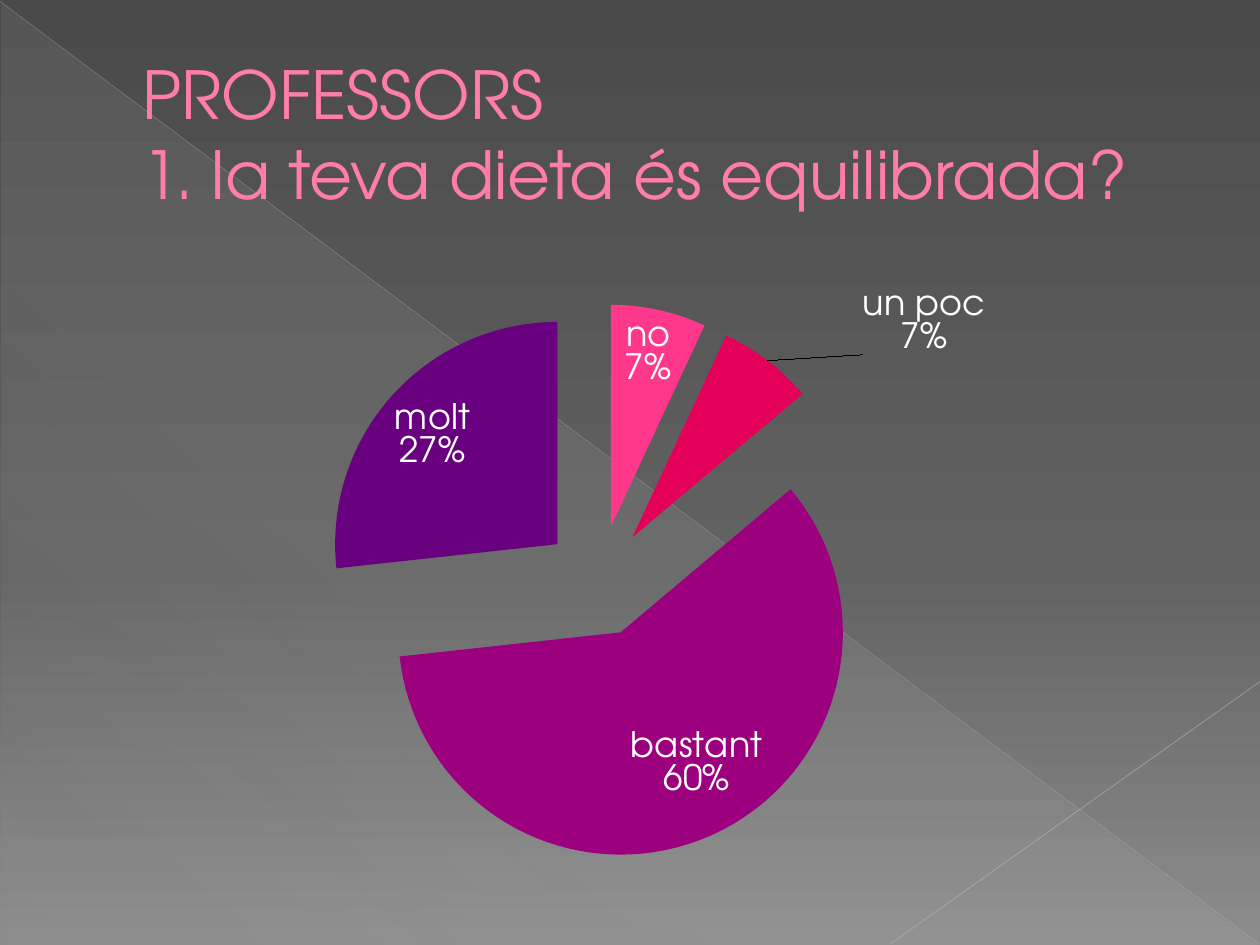
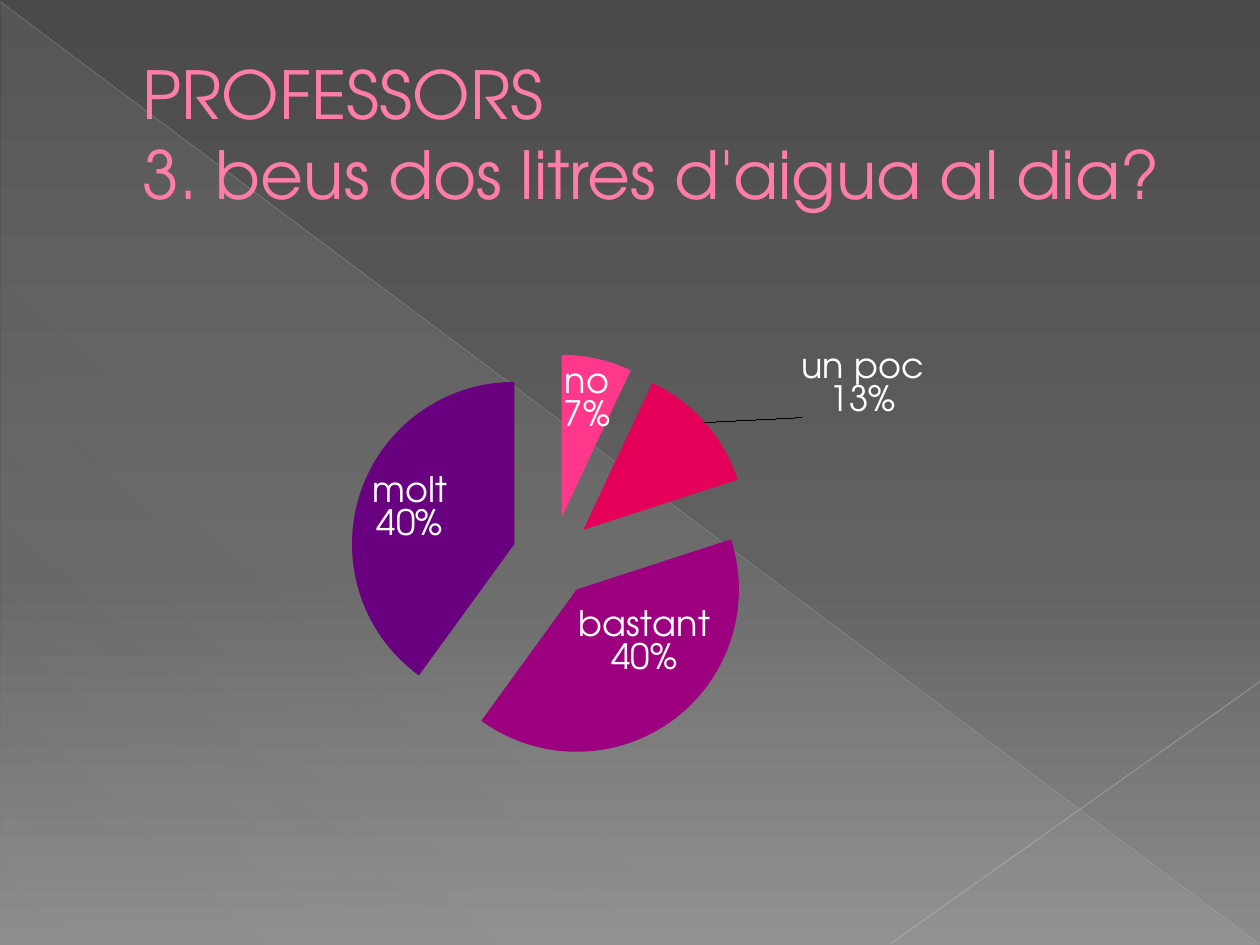
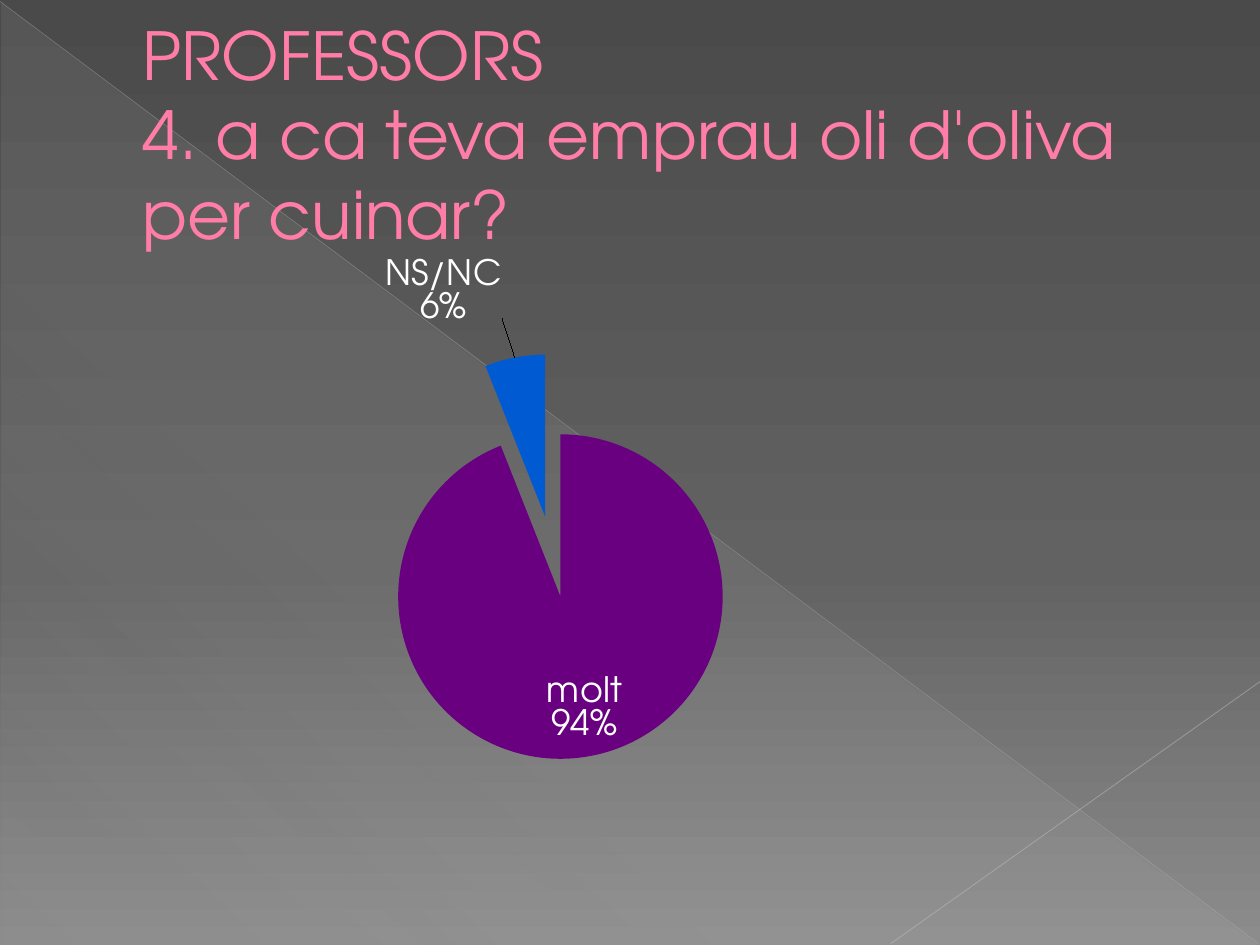
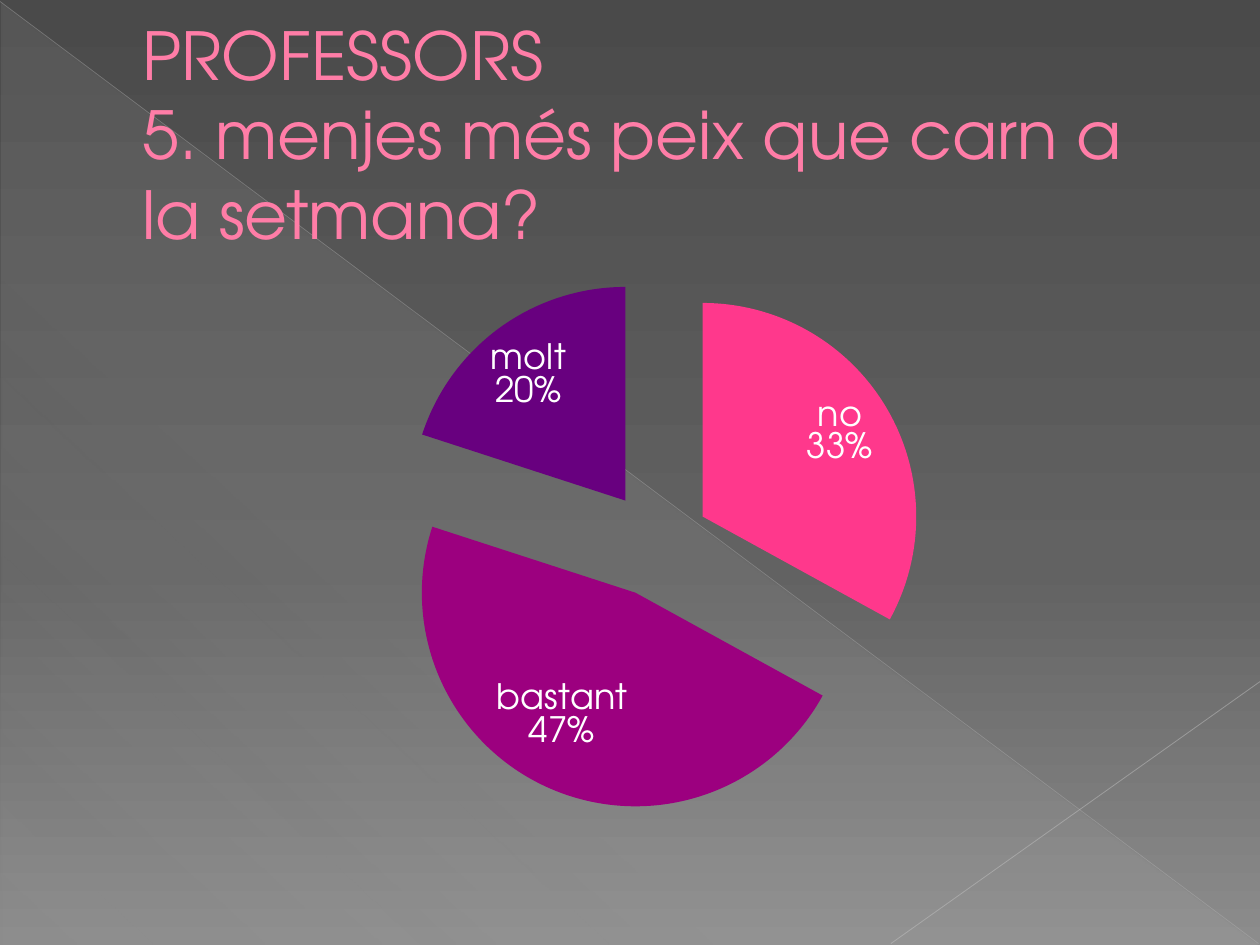
from copy import deepcopy

from pptx import Presentation
from pptx.chart.data import CategoryChartData
from pptx.dml.color import RGBColor
from pptx.enum.chart import XL_CHART_TYPE, XL_LABEL_POSITION
from pptx.enum.shapes import MSO_CONNECTOR, MSO_SHAPE
from pptx.enum.text import MSO_ANCHOR, MSO_AUTO_SIZE, PP_ALIGN
from pptx.oxml import parse_xml
from pptx.oxml.ns import nsdecls, qn
from pptx.util import Cm, Pt

FONT = "TeX Gyre Adventor"
TITLE_COLOR, TITLE_OUTLINE, LABEL_COLOR = "FF7DA7", "B12761", "FFFFFF"
ANSWER_COLORS = {"no": "FF388C", "un poc": "E40059", "bastant": "9C007F",
                 "molt": "68007F", "NS/NC": "005BD3"}
BACKGROUND = [(0, "4A4A4A", 100), (60, "626262", 100), (100, "8C8C8C", 100)]
SHEEN = [(0, "D2D2D2", 10), (70, "D2D2D2", 8), (100, "D2D2D2", 1)]
WIDE_PLOT = (0.008, 0.07, 0.929, 0.882)
SMALL_PLOT = (0.093, 0.15, 0.678, 0.644)

# question, share of each answer, plot area, moved labels {answer: (dx, dy)}
SURVEY = [
    ("1. la teva dieta és equilibrada?", (7, 7, 60, 27, 0),
     WIDE_PLOT, {"un poc": (0.08, 0)}),
    ("3. beus dos litres d'aigua al dia?", (7, 13, 40, 40, 0),
     SMALL_PLOT, {"un poc": (0.08, 0)}),
    ("4. a ca teva emprau oli d'oliva per cuinar?", (0, 0, 0, 94, 6),
     SMALL_PLOT, {"NS/NC": (-0.01, -0.05)}),
    ("5. menjes més peix que carn a la setmana?", (33, 0, 47, 20, 0),
     None, {}),
]


def color(hex_string):
    return RGBColor.from_string(hex_string)


def set_values(target, values):
    for name, value in values.items():
        setattr(target, name, value)


def gradient(stops, angle):
    stop_xml = "".join(
        f'<a:gs pos="{position * 1000}"><a:srgbClr val="{hex_string}">'
        f'<a:alpha val="{opacity * 1000}"/></a:srgbClr></a:gs>'
        for position, hex_string, opacity in stops)
    return parse_xml(f'<a:gradFill {nsdecls("a")} rotWithShape="1"><a:gsLst>{stop_xml}'
                     f'</a:gsLst><a:lin ang="{angle * 60000}" scaled="0"/></a:gradFill>')


def manual_layout(modes, **places):
    values = {**modes, **places}
    inner = "".join(f'<c:{name} val="{value}"/>' for name, value in values.items())
    return parse_xml(f'<c:layout {nsdecls("c")}><c:manualLayout>{inner}'
                     '</c:manualLayout></c:layout>')


class Deck:
    def __init__(self):
        self.presentation = Presentation()
        set_values(self.presentation, {"slide_width": Cm(25.4), "slide_height": Cm(19.05)})
        self.slide = None

    def new_slide(self):
        layout = self.presentation.slide_layouts[5]
        self.slide = self.presentation.slides.add_slide(layout)

    def background(self, stops, angle):
        fill = self.presentation.slide_master.background.fill
        fill.solid()
        solid = self.presentation.slide_master.element.xpath("./p:cSld/p:bg//a:solidFill")[0]
        solid.getparent().replace(solid, gradient(stops, angle))

    def to_master(self, *shapes):
        """Move shapes behind everything else on the slide master."""
        tree = self.presentation.slide_master.element.cSld.spTree
        for index, shape in enumerate(shapes, 2):
            tree.insert(index, shape.element)

    def triangle(self, left, top, width, height, stops, angle):
        shape = self.slide.shapes.add_shape(
            MSO_SHAPE.RIGHT_TRIANGLE, Cm(left), Cm(top), Cm(width), Cm(height))
        shape.shadow.inherit = False
        shape.line.fill.background()
        shape.fill.solid()
        solid = shape.element.spPr.find(qn("a:solidFill"))
        solid.getparent().replace(solid, gradient(stops, angle))
        return shape

    def line(self, start, end, hex_string, width, opacity):
        connector = self.slide.shapes.add_connector(
            MSO_CONNECTOR.STRAIGHT, *map(Cm, start + end))
        connector.line.width = Pt(width)
        connector.line.color.rgb = color(hex_string)
        properties = connector.element.spPr
        properties.xpath(".//a:srgbClr")[0].append(
            parse_xml(f'<a:alpha {nsdecls("a")} val="{opacity * 1000}"/>'))
        properties.append(parse_xml(f'<a:effectLst {nsdecls("a")}/>'))
        return connector

    def title(self, text):
        title = self.slide.shapes.title
        set_values(title, {"left": Cm(1.27), "top": Cm(0.74),
                           "width": Cm(22.86), "height": Cm(3.89)})
        frame = title.text_frame
        frame.text = text
        set_values(frame, {"word_wrap": True, "auto_size": MSO_AUTO_SIZE.NONE,
                           "vertical_anchor": MSO_ANCHOR.MIDDLE})
        paragraph = frame.paragraphs[0]
        paragraph.alignment = PP_ALIGN.LEFT
        properties = title.element.xpath(".//a:pPr")[0]
        properties.set("marL", str(Cm(1.35)))
        properties.set("indent", "0")
        for run in paragraph.runs:
            set_values(run.font, {"name": FONT, "size": Pt(37.8)})
            run.font.color.rgb = color(TITLE_COLOR)
        # Thin outline, and the same size for the line break
        run_styles = title.element.xpath(".//a:r/a:rPr")
        for style in run_styles:
            style.insert(0, parse_xml(
                f'<a:ln {nsdecls("a")} w="{Pt(0.5)}"><a:solidFill>'
                f'<a:srgbClr val="{TITLE_OUTLINE}"/></a:solidFill></a:ln>'))
        for line_break in title.element.xpath(".//a:br"):
            line_break.append(deepcopy(run_styles[0]))

    def pie(self, values, plot_area, moved_labels):
        answers = list(ANSWER_COLORS)
        data = CategoryChartData()
        data.categories = answers
        data.add_series("Series 1", values)
        chart = self.slide.shapes.add_chart(
            XL_CHART_TYPE.PIE, Cm(1.27), Cm(5.23), Cm(22.86), Cm(12.7), data).chart
        set_values(chart, {"has_title": False, "has_legend": False})
        set_values(chart.font, {"name": FONT, "size": Pt(10)})
        chart.font.color.rgb = color(LABEL_COLOR)
        plot = chart.plots[0]
        plot.vary_by_categories = True
        series = plot.series[0]

        # Slices
        for index, hex_string in enumerate(ANSWER_COLORS.values()):
            fill = series.points[index].format.fill
            fill.solid()
            fill.fore_color.rgb = color(hex_string)
        chart.element.xpath(".//c:ser/c:dPt")[0].addprevious(
            parse_xml(f'<c:explosion {nsdecls("c")} val="25"/>'))

        # Labels: rounded shares that miss 100 show their own value
        exact = sum(values) == 100
        labels = series.data_labels
        set_values(labels, {"show_category_name": True, "show_percentage": exact,
                            "show_value": not exact,
                            "number_format": "0%" if exact else '0"%"',
                            "number_format_is_linked": False,
                            "position": XL_LABEL_POSITION.BEST_FIT})
        set_values(labels.font, {"name": FONT, "size": Pt(20)})
        labels.font.color.rgb = color(LABEL_COLOR)
        label_list = chart.element.xpath(".//c:ser/c:dLbls")[0]
        label_list.find(qn("c:showBubbleSize")).addnext(
            parse_xml(f'<c:separator {nsdecls("c")}>\n</c:separator>'))
        shared = [child for child in label_list if child.tag != qn("c:showLeaderLines")]
        for answer, (dx, dy) in moved_labels.items():
            label = parse_xml(f'<c:dLbl {nsdecls("c")}>'
                              f'<c:idx val="{answers.index(answer)}"/></c:dLbl>')
            label.append(manual_layout({}, x=dx, y=dy))
            label.extend(deepcopy(shared))
            label_list.insert(0, label)

        # Plot area
        if plot_area:
            area = chart.element.xpath(".//c:plotArea")[0]
            for layout in area.findall(qn("c:layout")):
                area.remove(layout)
            modes = {"layoutTarget": "inner", "xMode": "edge", "yMode": "edge"}
            area.insert(0, manual_layout(modes, **dict(zip("xywh", plot_area))))


def main():
    deck = Deck()
    deck.background(BACKGROUND, 90)
    for number, (question, values, plot_area, moved_labels) in enumerate(SURVEY):
        deck.new_slide()
        if number == 0:  # decoration shared through the master
            deck.to_master(
                deck.triangle(0.03, 0.05, 25.35, 19, SHEEN, 133),
                deck.line((0, 0.03), (25.37, 19.02), "BFBFBF", 0.39, 35),
                deck.line((25.4, 13.74), (17.96, 19.02), "C6C6C6", 0.47, 45))
        deck.title(f"PROFESSORS\v{question}")
        deck.pie(values, plot_area, moved_labels)
    deck.presentation.save("out.pptx")


if __name__ == "__main__":
    main()
